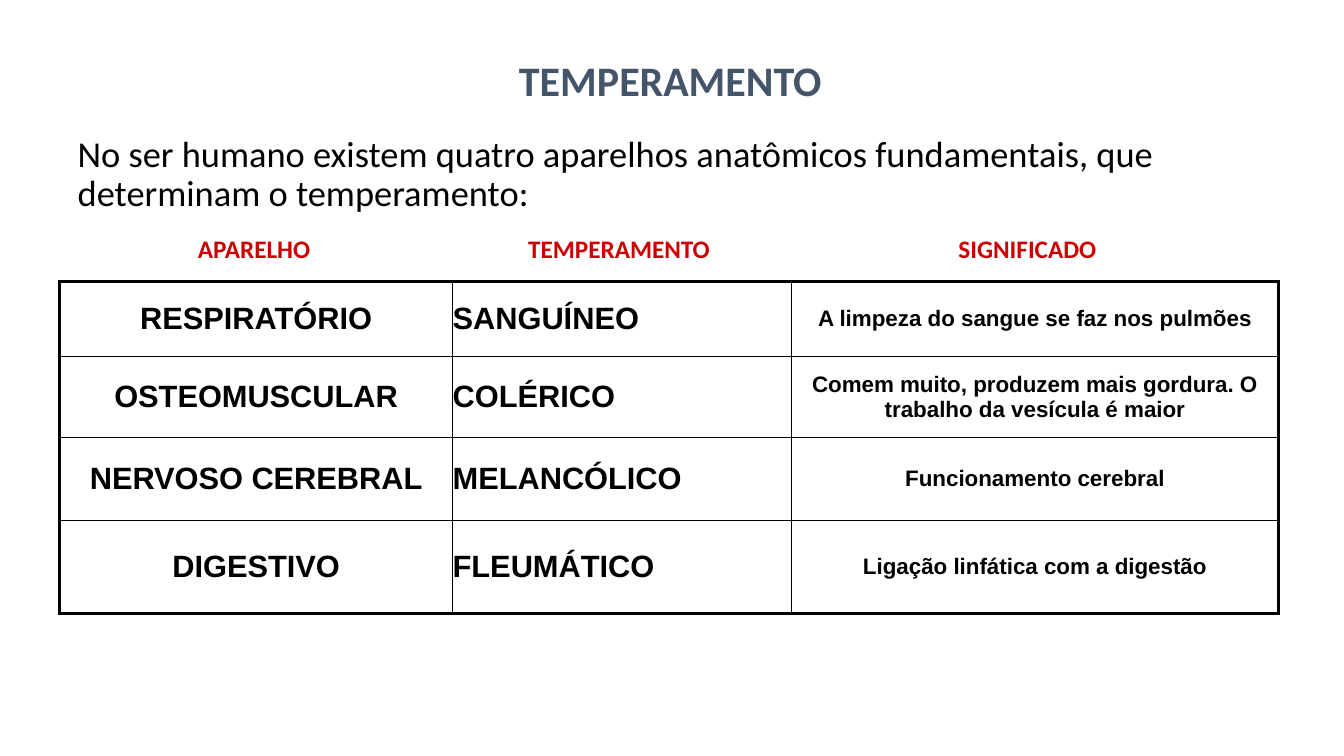
"""Build a slide about the four anatomical systems and their temperaments."""
from lxml import etree
from pptx import Presentation
from pptx.dml.color import RGBColor
from pptx.enum.text import MSO_ANCHOR, PP_ALIGN
from pptx.oxml.ns import qn
from pptx.util import Inches, Pt

LEFT, CENTER = PP_ALIGN.LEFT, PP_ALIGN.CENTER
TOP, MIDDLE = MSO_ANCHOR.TOP, MSO_ANCHOR.MIDDLE
COLORS = {"text": "000000", "heading": "44546A", "label": "CC0000", "border": "000000"}
THICK, THIN = 2.25, 1
COL_WIDTHS = [3.9, 3.36, 4.83]
ROW_HEIGHTS = [0.75, 0.8, 0.82, 0.93]
COL_STYLES = [(22, CENTER), (22, LEFT), (16, CENTER)]
ROWS = [
    ("RESPIRATÓRIO", "SANGUÍNEO", "A limpeza do sangue se faz nos pulmões"),
    ("OSTEOMUSCULAR", "COLÉRICO",
     "Comem muito, produzem mais gordura. O trabalho da vesícula é maior"),
    ("NERVOSO CEREBRAL", "MELANCÓLICO", "Funcionamento cerebral"),
    ("DIGESTIVO", "FLEUMÁTICO", "Ligação linfática com a digestão"),
]
LABELS = [("APARELHO", 1.21, 2.62), ("TEMPERAMENTO", 4.46, 3.36), ("SIGNIFICADO", 8.77, 2.84)]


def write(tf, text, size, color, align=CENTER, bold=True, font="Calibri"):
    """Fill a text frame with one formatted paragraph."""
    tf.word_wrap = True
    p = tf.paragraphs[0]
    p.text = text
    p.alignment = align
    p.font.name = font
    p.font.size = Pt(size)
    p.font.bold = bold
    p.font.color.rgb = RGBColor.from_string(COLORS[color])
    return p


def add_title(s, text):
    """Place the sentence in the title placeholder."""
    sp = s.shapes.title
    sp.left, sp.top, sp.width, sp.height = (Inches(v) for v in (0.67, 0.99, 12, 1.5))
    sp.text_frame.vertical_anchor = MIDDLE
    p = write(sp.text_frame, text, 26, "text", LEFT, False)
    p.line_spacing = 0.9


def add_text(s, text, box, size, color, anchor=TOP):
    """Add a centred bold text box."""
    tf = s.shapes.add_textbox(*(Inches(v) for v in box)).text_frame
    tf.vertical_anchor = anchor
    write(tf, text, size, color)


def set_borders(cell, widths):
    """Draw the left, right, top and bottom borders of a cell."""
    tc_pr = cell._tc.get_or_add_tcPr()
    for i, (side, width) in enumerate(zip("LRTB", widths)):
        ln = etree.Element(qn(f"a:ln{side}"), w=str(Pt(width)))
        fill = etree.SubElement(ln, qn("a:solidFill"))
        etree.SubElement(fill, qn("a:srgbClr"), val=COLORS["border"])
        tc_pr.insert(i, ln)


def add_temperament_table(s):
    """Add the table with a thick frame and thin inner lines."""
    n_rows, n_cols = len(ROWS), len(COL_WIDTHS)
    table = s.shapes.add_table(n_rows, n_cols, Inches(0.59), Inches(2.79),
                               Inches(sum(COL_WIDTHS)), Inches(sum(ROW_HEIGHTS))).table
    table.first_row = table.horz_banding = False
    for col, width in zip(table.columns, COL_WIDTHS):
        col.width = Inches(width)
    for r, (texts, height) in enumerate(zip(ROWS, ROW_HEIGHTS)):
        table.rows[r].height = Inches(height)
        for c, (text, (size, align)) in enumerate(zip(texts, COL_STYLES)):
            cell = table.cell(r, c)
            cell.margin_left = cell.margin_right = cell.margin_top = cell.margin_bottom = 0
            cell.vertical_anchor = MIDDLE
            cell.fill.background()
            write(cell.text_frame, text, size, "text", align, font="Arial")
            outer = (c == 0, c == n_cols - 1, r == 0, r == n_rows - 1)
            set_borders(cell, [THICK if edge else THIN for edge in outer])


def main():
    """Build and save the slide."""
    prs = Presentation()
    prs.slide_width, prs.slide_height = Inches(13.33), Inches(7.5)
    s = prs.slides.add_slide(prs.slide_layouts[5])
    add_title(s, "No ser humano existem quatro aparelhos anatômicos fundamentais, "
                 "que determinam o temperamento:")
    add_temperament_table(s)
    for text, left, width in LABELS:
        add_text(s, text, (left, 2.27, width, 0.4), 18, "label")
    add_text(s, "TEMPERAMENTO", (1.07, 0.44, 11.16, 0.71), 30, "heading", MIDDLE)
    prs.save("out.pptx")


if __name__ == "__main__":
    main()
